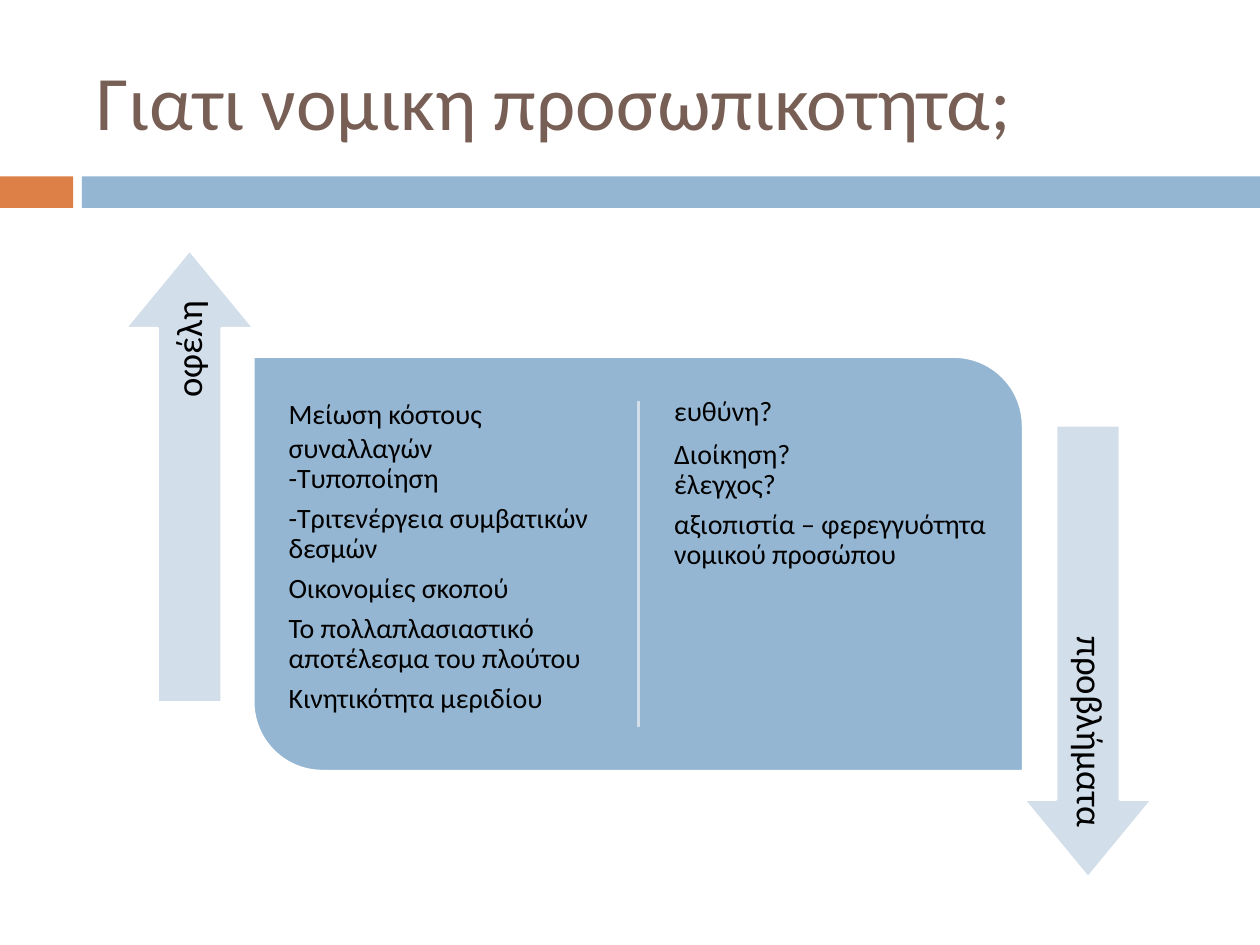
from lxml import etree
from pptx import Presentation
from pptx.dml.color import RGBColor
from pptx.enum.shapes import MSO_CONNECTOR, MSO_SHAPE
from pptx.enum.text import MSO_ANCHOR as ANCHOR, PP_ALIGN as ALIGN
from pptx.oxml.ns import qn
from pptx.util import Inches, Pt

COLORS = {
    "orange": "DD8047", "blue": "94B6D2", "pale": "D2DEEA",
    "brown": "775F55", "black": "000000", "white": "FFFFFF",
}


def add_filled(kind, box, fill, outline=None, adjustments=()):
    shape = slide.shapes.add_shape(kind, *[Inches(value) for value in box])
    shape.shadow.inherit = False
    shape.fill.solid()
    shape.fill.fore_color.rgb = RGBColor.from_string(COLORS[fill])
    if outline:
        shape.line.color.rgb = RGBColor.from_string(COLORS[outline])
        shape.line.width = Pt(1.5)
    else:
        shape.line.fill.background()
    for index, value in enumerate(adjustments):
        shape.adjustments[index] = value
    return shape


def add_text(box, lines, size, color="black", inset=0.07, anchor=ANCHOR.TOP, align=ALIGN.LEFT):
    """Each line is (text, tight); tight lines have 90% spacing and a gap after."""
    text_box = slide.shapes.add_textbox(*[Inches(value) for value in box])
    frame = text_box.text_frame
    frame.word_wrap = True
    frame.vertical_anchor = anchor
    frame.margin_left = frame.margin_right = Inches(inset)
    frame.margin_top = frame.margin_bottom = Inches(inset)
    frame.text = "\n".join(text for text, tight in lines)
    for paragraph, (text, tight) in zip(frame.paragraphs, lines):
        paragraph.alignment = align
        if tight:
            paragraph.line_spacing = 0.9
            paragraph.space_after = Pt(size * 0.35)
        font = paragraph.runs[0].font
        font.name = "Calibri"
        font.size = Pt(size)
        font.color.rgb = RGBColor.from_string(COLORS[color])
    return text_box


presentation = Presentation()
presentation.slide_width = Inches(10)
presentation.slide_height = Inches(7.5)
slide = presentation.slides.add_slide(presentation.slide_layouts[6])

# Title and the band below it
add_filled(MSO_SHAPE.RECTANGLE, (0, 1.4, 0.58, 0.25), "orange")
add_filled(MSO_SHAPE.RECTANGLE, (0.65, 1.4, 9.35, 0.25), "blue")
add_text((0.67, 0.25, 8.92, 1.08), [("Γιατι νομικη προσωπικοτητα;", False)], 44,
         color="brown", inset=0.1, anchor=ANCHOR.MIDDLE)

# Central panel with its divider
add_filled(MSO_SHAPE.ROUND_2_DIAG_RECTANGLE, (2.01, 2.83, 6.11, 3.29), "blue", "white", (0, 0.167))
divider = slide.shapes.add_connector(
    MSO_CONNECTOR.STRAIGHT, Inches(5.07), Inches(3.18), Inches(5.07), Inches(5.77))
divider.line.color.rgb = RGBColor.from_string(COLORS["pale"])
divider.line.width = Pt(1.5)
etree.SubElement(divider._element.spPr, qn("a:effectLst"))

# Benefits on the left, problems on the right
benefits = [
    ("Μείωση κόστους συναλλαγών", False),
    ("-Τυποποίηση", True),
    ("-Τριτενέργεια συμβατικών δεσμών", True),
    ("Οικονομίες σκοπού", True),
    ("Το πολλαπλασιαστικό αποτέλεσμα του πλούτου", True),
    ("Κινητικότητα μεριδίου", True),
]
problems = [
    ("ευθύνη?", True),
    ("Διοίκηση?", False),
    ("έλεγχος?", True),
    ("αξιοπιστία – φερεγγυότητα νομικού προσώπου", True),
]
for left, lines in ((2.22, benefits), (5.28, problems)):
    add_text((left, 3.08, 2.65, 2.79), lines, 16)

# Side arrows with their labels, turned up and down
for label, rotation, arrow_at, label_at in (
    ("οφέλη", 270, (-0.29, 3.27), (-0.13, 3.68)),
    ("προβλήματα", 90, (6.84, 4.66), (7, 4.76)),
):
    arrow = add_filled(MSO_SHAPE.RIGHT_ARROW, (*arrow_at, 3.59, 1.02), "pale", "white", (0.498, 0.607))
    label_box = add_text((*label_at, 3.28, 0.51), [(label, True)], 21,
                         inset=0.09, anchor=ANCHOR.MIDDLE, align=ALIGN.RIGHT)
    arrow.rotation = label_box.rotation = rotation

presentation.save("out.pptx")
